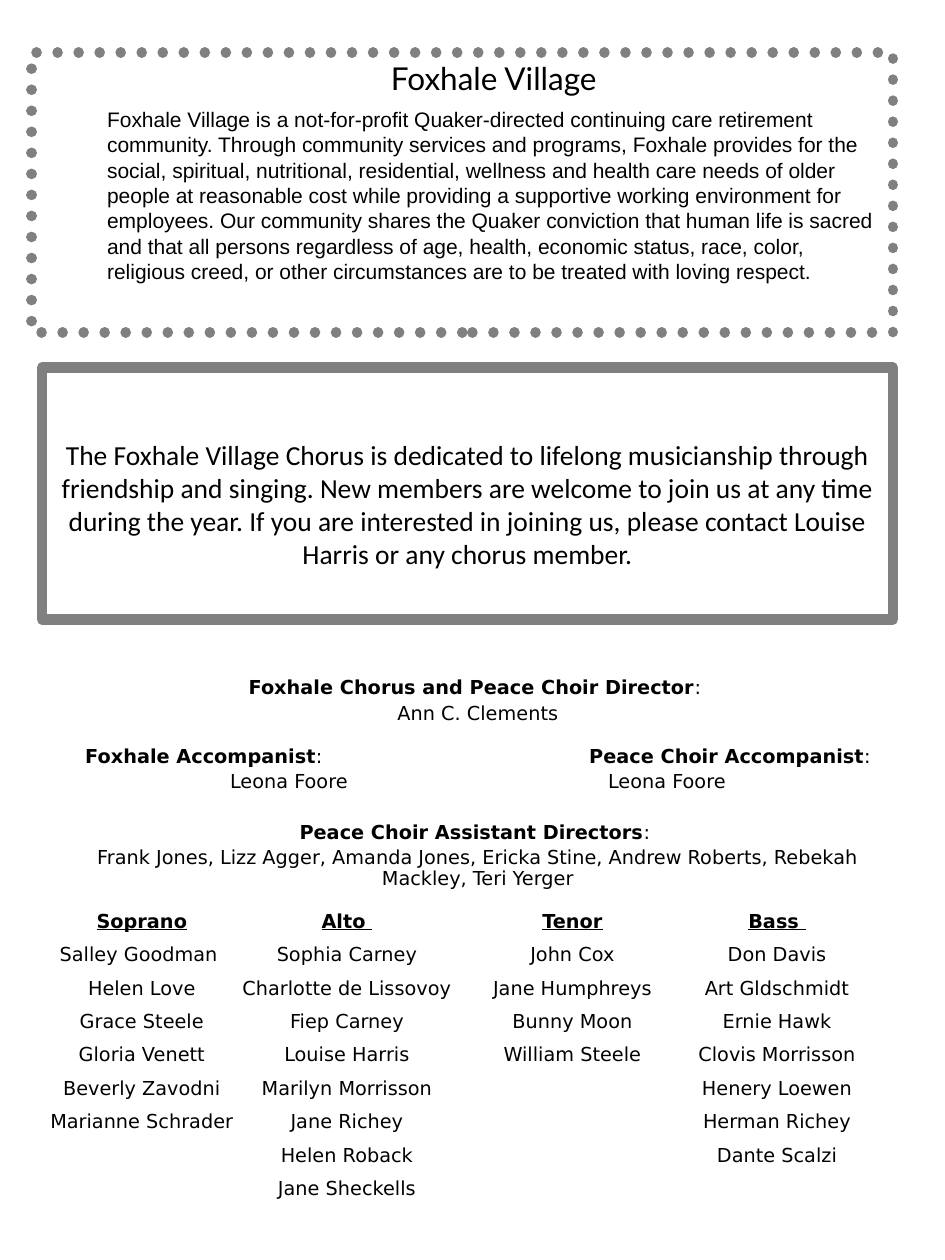
from lxml import etree
from pptx import Presentation
from pptx.dml.color import RGBColor
from pptx.enum.dml import MSO_LINE
from pptx.enum.shapes import MSO_SHAPE
from pptx.enum.text import MSO_ANCHOR, PP_ALIGN
from pptx.oxml.ns import qn
from pptx.util import Cm, Pt

RECTANGLE = MSO_SHAPE.RECTANGLE
ROUND_DOT = MSO_LINE.ROUND_DOT
TOP, MIDDLE = MSO_ANCHOR.TOP, MSO_ANCHOR.MIDDLE
CENTER, LEFT = PP_ALIGN.CENTER, PP_ALIGN.LEFT

BLACK, GREY = "000000", "808080"
LIST_FONT, LIST_SIZE = "DejaVu Sans", 11

VILLAGE_TEXT = (
    "Foxhale Village is a not-for-profit Quaker-directed continuing care retirement "
    "community. Through community services and programs, Foxhale provides for the "
    "social, spiritual, nutritional, residential, wellness and health care needs of "
    "older people at reasonable cost while providing a supportive working environment "
    "for employees. Our community shares the Quaker conviction that human life is "
    "sacred and that all persons regardless of age, health, economic status, race, "
    "color, religious creed, or other circumstances are to be treated with loving respect."
)
CHORUS_TEXT = (
    "The Foxhale Village Chorus is dedicated to lifelong musicianship through "
    "friendship and singing. New members are welcome to join us at any time during "
    "the year. If you are interested in joining us, please contact Louise Harris or "
    "any chorus member."
)
# Each line: space before in points, tab stop in cm, runs of (text, bold)
DIRECTOR_LINES = [
    (0, None, [("Foxhale Chorus and Peace Choir Director", True), (": ", False)]),
    (2.5, None, [("Ann C. Clements", False)]),
    (13, 10.16, [("Foxhale Accompanist", True), (": \t", False),
                 ("Peace Choir Accompanist", True), (":", False)]),
    (2.5, 7.62, [("Leona Foore\tLeona Foore", False)]),
    (17, None, [("Peace Choir Assistant Directors", True), (": ", False)]),
    (2.5, None, [("Frank Jones, Lizz Agger, Amanda Jones, Ericka Stine, "
                  "Andrew Roberts, Rebekah Mackley, Teri Yerger", False)]),
]
# Each voice: left and width in cm, heading, singers
VOICES = [
    (0, 5.72, "Soprano", ["Salley Goodman ", "Helen Love", "Grace Steele",
                          "Gloria Venett", "Beverly Zavodni", "Marianne Schrader"]),
    (4.24, 5.51, "Alto ", ["Sophia Carney", "Charlotte de Lissovoy", "Fiep Carney",
                           "Louise Harris", "Marilyn Morrisson", "Jane Richey",
                           "Helen Roback", "Jane Sheckells"]),
    (8.68, 5.72, "Tenor", ["John Cox", "Jane Humphreys", "Bunny Moon",
                           "William Steele"]),
    (13.34, 4.65, "Bass ", ["Don Davis", "Art Gldschmidt", "Ernie Hawk",
                            "Clovis Morrisson", "Henery Loewen", "Herman Richey",
                            "Dante Scalzi"]),
]


def color(hex_value):
    return RGBColor.from_string(hex_value)


def add_frame(slide, left, top, width, height, line_width, anchor):
    """Add an unfilled rectangle with a thick grey, round-joined outline."""
    frame = slide.shapes.add_shape(RECTANGLE, Cm(left), Cm(top), Cm(width), Cm(height))
    frame.shadow.inherit = False
    frame.fill.background()
    frame.line.color.rgb = color(GREY)
    frame.line.width = Pt(line_width)
    etree.SubElement(frame.line._get_or_add_ln(), qn("a:round"))
    frame.text_frame.word_wrap = True
    frame.text_frame.vertical_anchor = anchor
    return frame


def add_text_area(slide, left, top, width, height):
    area = slide.shapes.add_textbox(Cm(left), Cm(top), Cm(width), Cm(height)).text_frame
    area.word_wrap = True
    return area


def add_line(area, runs, font, size, align=CENTER, before=0):
    """Add a paragraph of (text, bold) runs, using the empty first one if free."""
    first = area.paragraphs[0]
    line = area.add_paragraph() if first.runs else first
    line.alignment = align
    line.space_before = Pt(before)
    line.font.name = font
    line.font.size = Pt(size)
    line.font.color.rgb = color(BLACK)
    for text, bold in runs:
        run = line.add_run()
        run.text = text
        run.font.bold = bold
    return line


def set_tab_stop(line, position):
    tabs = etree.Element(qn("a:tabLst"))
    etree.SubElement(tabs, qn("a:tab"), pos=str(Cm(position)), algn="l")
    properties = line._p.get_or_add_pPr()
    default_run = properties.find(qn("a:defRPr"))
    default_run.addprevious(tabs)


def add_village_box(slide, left, top, width, height):
    frame = add_frame(slide, left, top, width, height, 6, TOP)
    frame.line.dash_style = ROUND_DOT
    frame.line._get_or_add_ln().set("cap", "rnd")
    area = frame.text_frame
    heading = add_line(area, [("Foxhale Village", False)], "Lato", 18)
    body = add_line(area, [(VILLAGE_TEXT, False)], "Arial", 12, LEFT, 5.5)
    body.line_spacing = Pt(14.5)
    for line in (heading, body):
        line._p.get_or_add_pPr().set("marL", str(Cm(1.27)))


def add_chorus_box(slide, left, top, width, height):
    area = add_frame(slide, left, top, width, height, 5.75, MIDDLE).text_frame
    area.margin_top = Cm(0.56)
    add_line(area, [(CHORUS_TEXT, False)], "Calibri", 15.7)


def add_directors(slide, left, top, width, height):
    area = add_text_area(slide, left, top, width, height)
    for before, tab_stop, runs in DIRECTOR_LINES:
        line = add_line(area, runs, LIST_FONT, LIST_SIZE, before=before)
        line.line_spacing = 0.9
        if tab_stop:
            set_tab_stop(line, tab_stop)


def add_voices(slide, left, top, height):
    for offset, width, voice, singers in VOICES:
        area = add_text_area(slide, left + offset, top, width, height)
        heading = add_line(area, [(voice, True)], LIST_FONT, LIST_SIZE)
        heading.runs[0].font.underline = True
        for singer in singers:
            add_line(area, [(singer, False)], LIST_FONT, LIST_SIZE, before=5.9)


def main():
    presentation = Presentation()
    presentation.slide_width = Cm(19.05)
    presentation.slide_height = Cm(25.4)
    slide = presentation.slides.add_slide(presentation.slide_layouts[6])
    add_chorus_box(slide, 0.85, 7.41, 17.15, 5.08)
    add_village_box(slide, 0.64, 1.06, 17.36, 5.64)
    add_voices(slide, 0, 18.2, 7.09)
    add_directors(slide, 1.06, 13.55, 17.15, 4.65)
    presentation.save("out.pptx")


if __name__ == "__main__":
    main()
